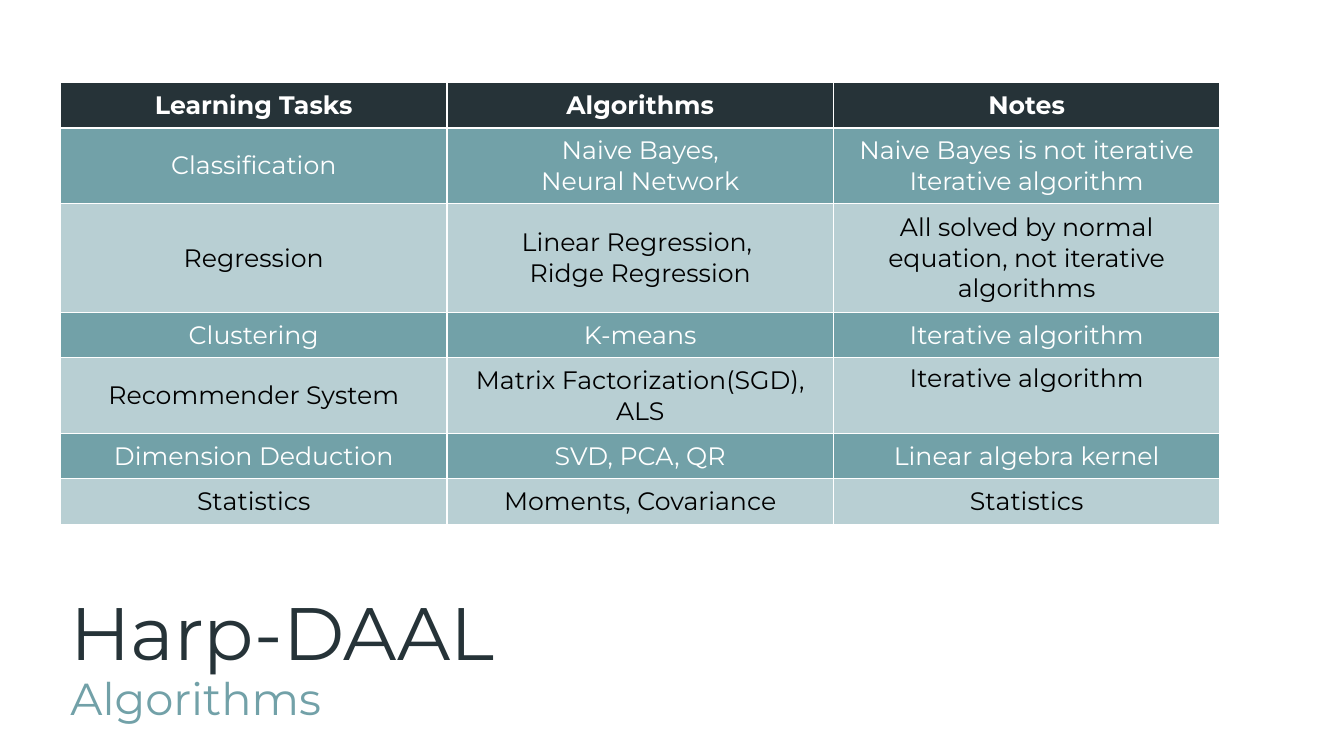
from dataclasses import dataclass

from lxml.etree import SubElement
from pptx import Presentation
from pptx.dml.color import RGBColor as RGB
from pptx.enum.text import MSO_ANCHOR as Anchor, PP_ALIGN as Align
from pptx.oxml.ns import qn
from pptx.slide import Slide
from pptx.table import _Cell as Cell
from pptx.util import Inches, Pt


@dataclass(frozen=True)
class Theme:
    font: str = "Montserrat"
    dark: RGB = RGB(0x26, 0x33, 0x38)
    teal: RGB = RGB(0x72, 0xA1, 0xA8)
    white: RGB = RGB(0xFF, 0xFF, 0xFF)
    black: RGB = RGB(0, 0, 0)
    title_size: int = 53
    subtitle_size: int = 32
    table_size: int = 18


@dataclass(frozen=True)
class TaskRow:
    height: float
    task: str
    algorithms: str
    remark: str
    remark_anchor: Anchor = Anchor.MIDDLE


@dataclass(frozen=True)
class RowStyle:
    fill: RGB
    text: RGB
    bold: bool = False
    opacity: int = 100


THEME = Theme()
HEADER = RowStyle(THEME.dark, THEME.white, bold=True)
BANDS = (RowStyle(THEME.teal, THEME.white),
         RowStyle(THEME.teal, THEME.black, opacity=50))

LEFT, WIDTH = 0.6, 11.5
TASKS = [
    TaskRow(0.45, "Learning Tasks", "Algorithms", "Notes"),
    TaskRow(0.75, "Classification", "Naive Bayes,\nNeural Network",
            "Naive Bayes is not iterative Iterative algorithm"),
    TaskRow(1.08, "Regression", "Linear Regression, \nRidge Regression",
            "All solved by normal equation, not iterative algorithms"),
    TaskRow(0.45, "Clustering", "K-means", "Iterative algorithm"),
    TaskRow(0.75, "Recommender System", "Matrix Factorization(SGD),\nALS",
            "Iterative algorithm", Anchor.TOP),
    TaskRow(0.45, "Dimension Deduction", "SVD, PCA, QR", "Linear algebra kernel"),
    TaskRow(0.45, "Statistics", "Moments, Covariance", "Statistics"),
]


def fill_cell(cell: Cell, text: str, style: RowStyle, anchor: Anchor) -> None:
    cell.text = text
    cell.vertical_anchor = anchor
    cell.fill.solid()
    cell.fill.fore_color.rgb = style.fill
    if style.opacity < 100:
        color = cell._tc.tcPr.find(f"{qn('a:solidFill')}/{qn('a:srgbClr')}")
        SubElement(color, qn("a:alpha"), val=str(style.opacity * 1000))
    for line in cell.text_frame.paragraphs:
        line.alignment = Align.CENTER
        line.font.name = THEME.font
        line.font.size = Pt(THEME.table_size)
        line.font.bold = style.bold
        line.font.color.rgb = style.text


def add_task_table(slide: Slide) -> None:
    height = sum(row.height for row in TASKS)
    # The default table style supplies the white rules, thicker below the header
    tasks = slide.shapes.add_table(len(TASKS), 3, Inches(LEFT), Inches(0.82),
                                   Inches(WIDTH), Inches(height)).table
    for index, row in enumerate(TASKS):
        tasks.rows[index].height = Inches(row.height)
        style = BANDS[(index - 1) % 2] if index else HEADER
        fill_cell(tasks.cell(index, 0), row.task, style, Anchor.MIDDLE)
        fill_cell(tasks.cell(index, 1), row.algorithms, style, Anchor.MIDDLE)
        fill_cell(tasks.cell(index, 2), row.remark, style, row.remark_anchor)


def add_heading(slide: Slide) -> None:
    heading = slide.shapes.add_textbox(Inches(LEFT), Inches(5.83),
                                       Inches(WIDTH), Inches(1.45)).text_frame
    heading.word_wrap = True
    heading.vertical_anchor = Anchor.MIDDLE
    heading.text = "Harp-DAAL\nAlgorithms"
    looks = ((THEME.title_size, THEME.dark), (THEME.subtitle_size, THEME.teal))
    for line, (size, color) in zip(heading.paragraphs, looks):
        line.line_spacing = 0.9
        line.font.name = THEME.font
        line.font.size = Pt(size)
        line.font.color.rgb = color


def main() -> None:
    deck = Presentation()
    deck.slide_width, deck.slide_height = Inches(13.33), Inches(7.5)
    slide = deck.slides.add_slide(deck.slide_layouts[6])
    # Title and subtitle below the table
    add_heading(slide)
    # Learning tasks with their algorithms
    add_task_table(slide)
    deck.save("out.pptx")


if __name__ == "__main__":
    main()
